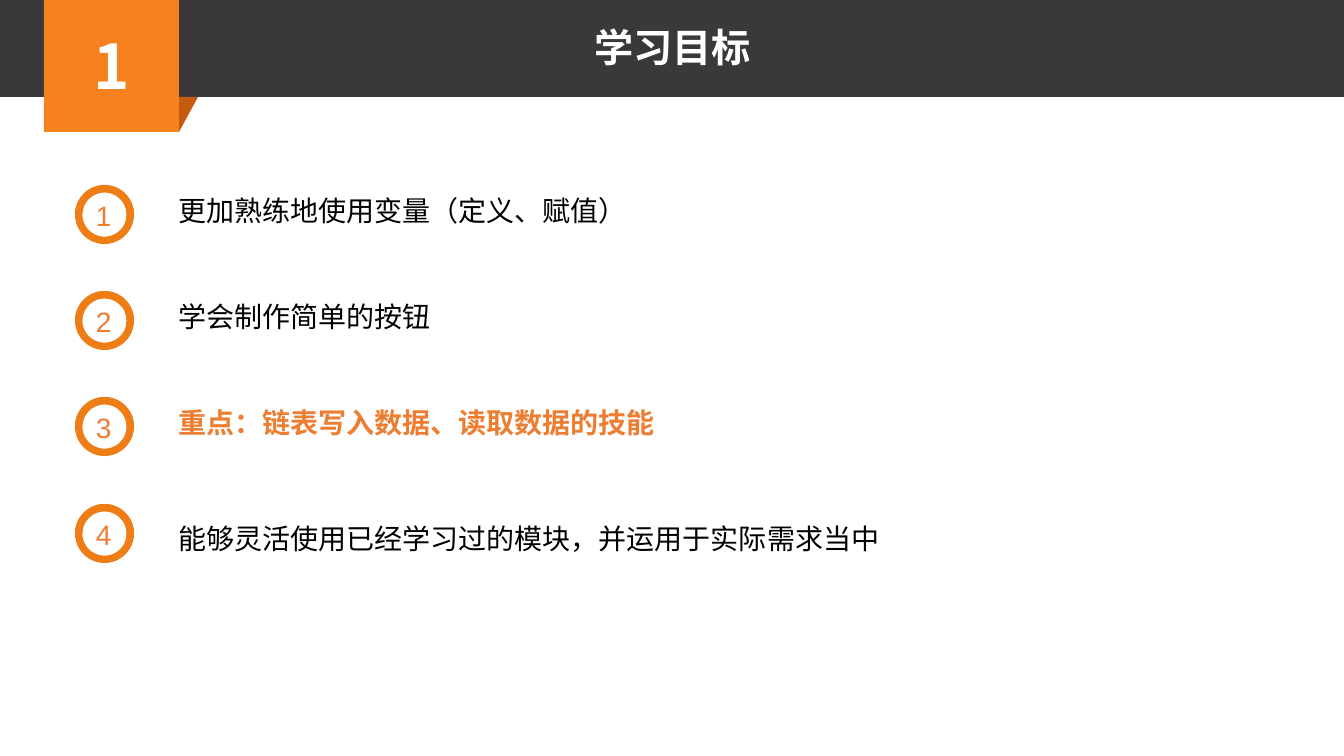
"""Builds the learning goals slide with a numbered list."""
from dataclasses import dataclass

from pptx import Presentation
from pptx import util as u
from pptx.dml.color import RGBColor
from pptx.enum import shapes, text
from pptx.oxml import ns
from lxml import etree

PX = 914400 / 100.8
WHITE = RGBColor(0xFF, 0xFF, 0xFF)
BLACK = RGBColor(0x00, 0x00, 0x00)
CHARCOAL = RGBColor(0x3A, 0x38, 0x38)
ORANGE = RGBColor(0xF5, 0x82, 0x1F)
RUST = RGBColor(0xC5, 0x5A, 0x11)
RING = RGBColor(0xEE, 0x7D, 0x16)
ACCENT = RGBColor(0xED, 0x7D, 0x31)
CJK = "Noto Sans CJK SC"
LATIN = "Arial"
RING_LEFT, RING_TOP, RING_SIZE = 75, 185, 59
RING_SPAN = 319


@dataclass(frozen=True)
class Box:
    """A rectangle in px."""
    left: int
    top: int
    width: int
    height: int

    def emu(self) -> list:
        """Return the four lengths in EMU."""
        return [u.Emu(round(v * PX))
                for v in (self.left, self.top, self.width, self.height)]


@dataclass(frozen=True)
class Goal:
    """One line of the list."""
    wording: str
    space_before: float = 51.7
    color: RGBColor = BLACK
    bold: bool = False


GOALS = [
    Goal("更加熟练地使用变量（定义、赋值）", 0),
    Goal("学会制作简单的按钮"),
    Goal("重点：链表写入数据、读取数据的技能", color=ACCENT, bold=True),
    Goal("能够灵活使用已经学习过的模块，并运用于实际需求当中", 58.9),
]


def format_runs(p, size: int, color: RGBColor, font: str, bold: bool = False) -> None:
    """Format every run of a paragraph."""
    for r in p.runs:
        r.font.size = u.Pt(size)
        r.font.bold = bold
        r.font.name = font
        r.font.color.rgb = color
        ea = etree.SubElement(r.font._element, ns.qn("a:ea"))
        ea.set("typeface", CJK)


def add_filled(parent, kind, box: Box, color: RGBColor, adjustments: tuple = ()):
    """Add a preset shape with a plain fill."""
    sp = parent.add_shape(kind, *box.emu())
    sp.shadow.inherit = False
    sp.fill.solid()
    sp.fill.fore_color.rgb = color
    sp.line.fill.background()
    for i, value in enumerate(adjustments):
        sp.adjustments[i] = value
    return sp


def place(sp, box: Box):
    """Move a placeholder to the front, at the given box."""
    sp.left, sp.top, sp.width, sp.height = box.emu()
    tree = sp._element.getparent()
    tree.append(sp._element)
    tf = sp.text_frame
    tf.word_wrap = True
    tf.auto_size = text.MSO_AUTO_SIZE.NONE
    tf.vertical_anchor = text.MSO_ANCHOR.TOP
    return tf


def add_header(s) -> None:
    """Draw the band, the section badge and the title."""
    kinds = shapes.MSO_SHAPE
    add_filled(s.shapes, kinds.RECTANGLE, Box(0, -3, 1344, 100), CHARCOAL)
    badge = add_filled(s.shapes, kinds.RECTANGLE, Box(44, -3, 135, 135), ORANGE)
    tf = badge.text_frame
    tf.text = "1"
    tf.vertical_anchor = text.MSO_ANCHOR.MIDDLE
    tf.paragraphs[0].alignment = text.PP_ALIGN.CENTER
    format_runs(tf.paragraphs[0], 44, WHITE, CJK, True)
    fold = add_filled(s.shapes, kinds.RIGHT_TRIANGLE, Box(179, 97, 19, 35), RUST)
    fold._element.spPr.find(ns.qn("a:xfrm")).set("flipV", "1")
    tf = place(s.shapes.title, Box(452, 18, 441, 57))
    tf.text = "学习目标"
    tf.paragraphs[0].alignment = text.PP_ALIGN.CENTER
    format_runs(tf.paragraphs[0], 28, WHITE, CJK, True)


def add_ring(s, index: int) -> None:
    """Draw one numbered ring as a group."""
    top = RING_TOP + index * RING_SPAN // (len(GOALS) - 1)
    box = Box(RING_LEFT, top, RING_SIZE, RING_SIZE)
    group = s.shapes.add_group_shape().shapes
    add_filled(group, shapes.MSO_SHAPE.DONUT, box, RING, (0.125,))
    add_filled(group, shapes.MSO_SHAPE.BLOCK_ARC, box, RING, (107.952, 5.13, 0.125))
    tf = group.add_textbox(*Box(RING_LEFT + 11, top + 9, 36, 44).emu()).text_frame
    tf.word_wrap = False
    tf.text = str(index + 1)
    format_runs(tf.paragraphs[0], 20, ACCENT, LATIN)


def add_goals(s) -> None:
    """Fill the body placeholder with the goals."""
    tf = place(s.placeholders[1], Box(168, 188, 973, 370))
    tf.text = "\n".join(goal.wording for goal in GOALS)
    for p, goal in zip(tf.paragraphs, GOALS):
        p.line_spacing = u.Pt(24)
        p.space_before = u.Pt(goal.space_before)
        p.space_after = u.Pt(0)
        pPr = p._p.get_or_add_pPr()
        pPr.set("marL", "0")
        pPr.set("indent", "0")
        etree.SubElement(pPr, ns.qn("a:buNone"))
        format_runs(p, 20, goal.color, LATIN, goal.bold)


def main() -> None:
    """Build and save the slide."""
    prs = Presentation()
    prs.slide_width, prs.slide_height = Box(0, 0, 1344, 756).emu()[2:]
    s = prs.slides.add_slide(prs.slide_layouts[1])
    add_header(s)
    for index in range(len(GOALS)):
        add_ring(s, index)
    add_goals(s)
    prs.save("out.pptx")


if __name__ == "__main__":
    main()
